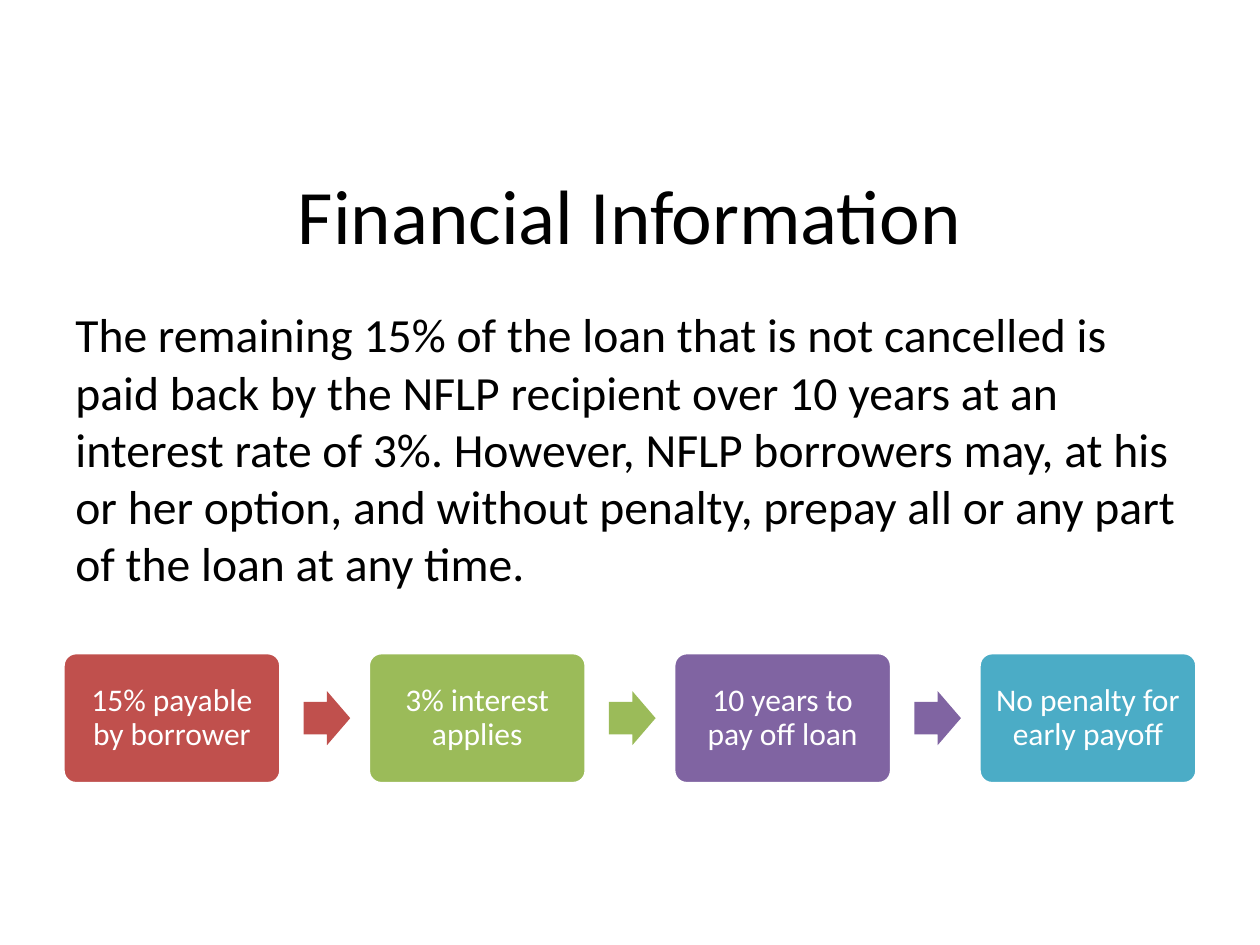
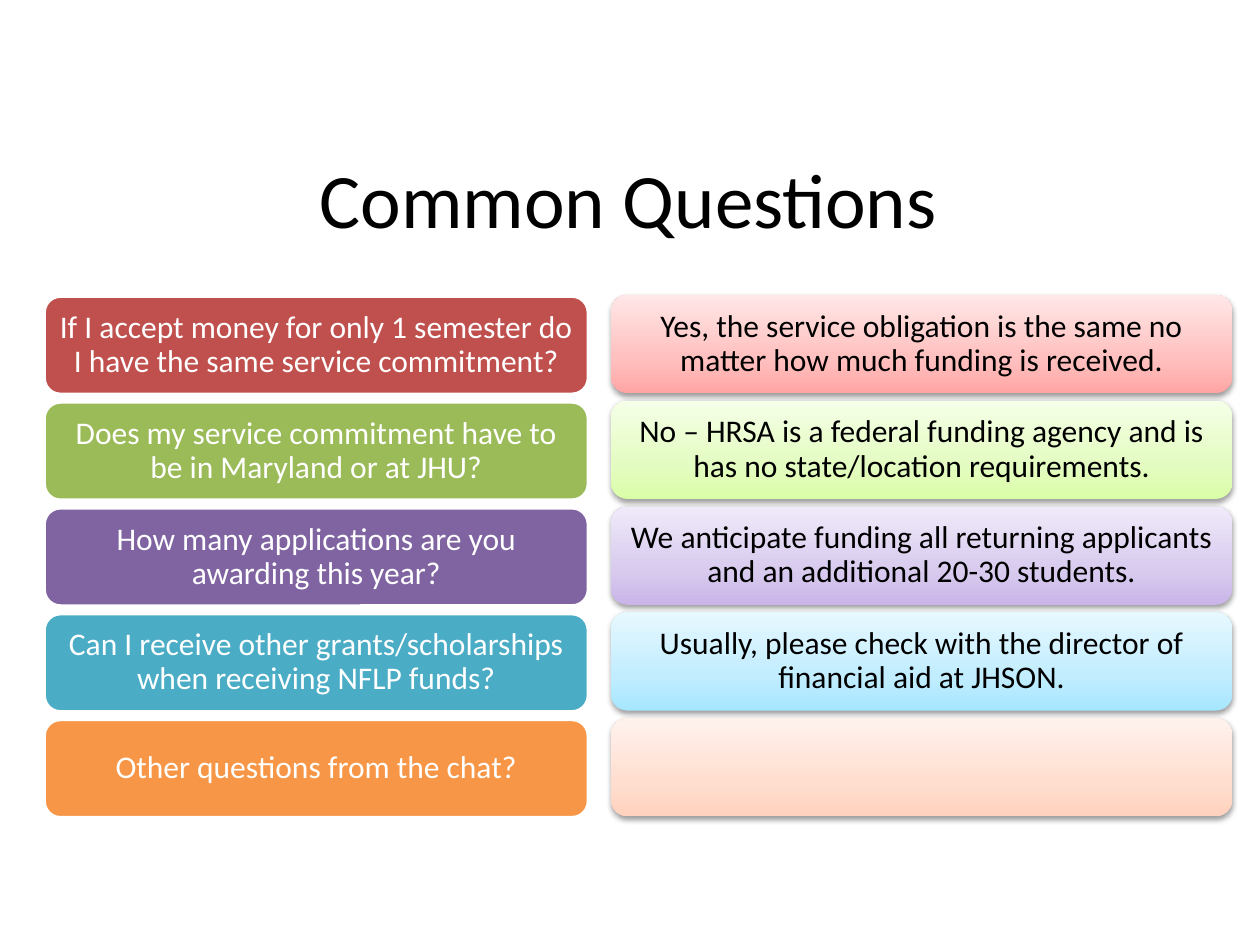
import copy

import pptx
import pptx.dml.color
import pptx.enum.shapes
import pptx.enum.text
import pptx.oxml.ns
import pptx.util
from lxml import etree

RGBColor = pptx.dml.color.RGBColor
MSO_SHAPE = pptx.enum.shapes.MSO_SHAPE
PP_ALIGN = pptx.enum.text.PP_ALIGN
MSO_ANCHOR = pptx.enum.text.MSO_ANCHOR
Pt = pptx.util.Pt
qn = pptx.oxml.ns.qn

FONT = "Calibri"
BLACK = RGBColor(0x00, 0x00, 0x00)
WHITE = RGBColor(0xFF, 0xFF, 0xFF)
RED = RGBColor(0xC0, 0x50, 0x4D)
GREEN = RGBColor(0x9B, 0xBB, 0x59)
PURPLE = RGBColor(0x80, 0x64, 0xA2)
TEAL = RGBColor(0x4B, 0xAC, 0xC6)
ORANGE = RGBColor(0xF7, 0x96, 0x46)

# Tints run from the bottom of a box to its top.
TINT_STOPS = (0, 0.35, 1)
RED_TINTS = (RGBColor(0xFF, 0xA6, 0xA5), RGBColor(0xFF, 0xC0, 0xBF), RGBColor(0xFF, 0xE7, 0xE7))
GREEN_TINTS = (RGBColor(0xDA, 0xFD, 0xA7), RGBColor(0xE4, 0xFC, 0xC2), RGBColor(0xF5, 0xFF, 0xE7))
PURPLE_TINTS = (RGBColor(0xC9, 0xB5, 0xE8), RGBColor(0xD8, 0xCB, 0xEE), RGBColor(0xF0, 0xEA, 0xF9))
TEAL_TINTS = (RGBColor(0xA7, 0xE6, 0xFF), RGBColor(0xC1, 0xED, 0xFF), RGBColor(0xE7, 0xF8, 0xFF))
ORANGE_TINTS = (RGBColor(0xFF, 0xD2, 0xBD), RGBColor(0xFF, 0xDE, 0xD0), RGBColor(0xFF, 0xF2, 0xED))

# The slide is a grid of 100 columns by 75 rows of square cells.
CELL = pptx.util.Inches(0.1)
COLUMNS, ROWS = 100, 75
CARD_INSET = round(0.7 * CELL)

REPAYMENT = (
    "The remaining 15% of the loan that is not cancelled is paid back by the NFLP "
    "recipient over 10 years at an interest rate of 3%. However, NFLP borrowers may, "
    "at his or her option, and without penalty, prepay all or any part of the loan "
    "at any time."
)
STEPS = [
    ("15% payable by borrower", RED),
    ("3% interest applies", GREEN),
    ("10 years to pay off loan", PURPLE),
    ("No penalty for early payoff", TEAL),
]
QUESTIONS = [
    ("If I accept money for only 1 semester do I have the same service commitment?", RED,
     "Yes, the service obligation is the same no matter how much funding is received.",
     RED_TINTS),
    ("Does my service commitment have to be in Maryland or at JHU?", GREEN,
     "No – HRSA is a federal funding agency and is has no state/location requirements.",
     GREEN_TINTS),
    ("How many applications are you awarding this year?", PURPLE,
     "We anticipate funding all returning applicants and an additional 20-30 students.",
     PURPLE_TINTS),
    ("Can I receive other grants/scholarships when receiving NFLP funds?", TEAL,
     "Usually, please check with the director of financial aid at JHSON.", TEAL_TINTS),
    ("Other questions from the chat?", ORANGE, "", ORANGE_TINTS),
]


def cells(*counts):
    return [round(count * CELL) for count in counts]


def write(frame, text, size, color, align=PP_ALIGN.CENTER, anchor=MSO_ANCHOR.MIDDLE,
          line_spacing=None):
    frame.word_wrap = True
    frame.vertical_anchor = anchor
    paragraph = frame.paragraphs[0]
    paragraph.alignment = align
    paragraph.line_spacing = line_spacing
    run = paragraph.add_run()
    run.text = text
    run.font.name = FONT
    run.font.size = Pt(size)
    run.font.color.rgb = color


def add_title(slide, text, left, top, height):
    title = slide.shapes.add_textbox(*cells(left, top, 90, height))
    write(title.text_frame, text, 44, BLACK)


def add_flat_shape(slide, preset, area, color):
    shape = slide.shapes.add_shape(preset, *cells(*area))
    shape.shadow.inherit = False
    shape.fill.solid()
    shape.fill.fore_color.rgb = color
    shape.line.fill.background()
    return shape


def add_card(slide, area, text, color, text_color=WHITE):
    """Rounded box with a white outline and centred text."""
    card = add_flat_shape(slide, MSO_SHAPE.ROUNDED_RECTANGLE, area, color)
    card.line.color.rgb = WHITE
    card.line.width = Pt(2)
    frame = card.text_frame
    frame.margin_left = frame.margin_right = CARD_INSET
    frame.margin_top = frame.margin_bottom = CARD_INSET
    if text:
        write(frame, text, 18, text_color, line_spacing=0.9)
    return card


def tint(card, tints):
    """Give a card a three-stop upward gradient instead of its flat fill."""
    card.fill.gradient()
    card.fill.gradient_angle = 90
    stop_list = card.element.spPr.find(qn("a:gradFill")).find(qn("a:gsLst"))
    stop_list.insert(1, copy.deepcopy(stop_list[0]))
    for stop, position, color in zip(card.fill.gradient_stops, TINT_STOPS, tints):
        stop.position = position
        stop.color.rgb = color


def cast_shadow(card):
    effects = card.element.spPr.find(qn("a:effectLst"))
    shadow = etree.SubElement(effects, qn("a:outerShdw"), blurRad=str(Pt(3.1)),
                              dist=str(Pt(1.6)), dir="5400000", rotWithShape="0")
    black = etree.SubElement(shadow, qn("a:srgbClr"), val=str(BLACK))
    etree.SubElement(black, qn("a:alpha"), val="38000")


def add_answer(slide, area, text, tints):
    answer = add_card(slide, area, text, tints[0], BLACK)
    answer.line.fill.background()
    tint(answer, tints)
    cast_shadow(answer)


def add_process(slide, steps, left, top, right):
    """Row of equally spaced step cards, each leading to the next by an arrow."""
    width, height = 17.3, 10.4
    arrow_width, arrow_height, arrow_offset = 3.7, 4.3, 19.1
    pitch = (right - left - width) / (len(steps) - 1)
    for index, (text, color) in enumerate(steps):
        step_left = left + index * pitch
        step = add_card(slide, (step_left, top, width, height), text, color)
        step.adjustments[0] = 0.1
        if index < len(steps) - 1:
            arrow_top = top + (height - arrow_height) / 2
            arrow = add_flat_shape(
                slide, MSO_SHAPE.RIGHT_ARROW,
                (step_left + arrow_offset, arrow_top, arrow_width, arrow_height), color)
            arrow.adjustments[0] = 0.6


def build_financial_slide(slide):
    add_title(slide, "Financial Information", 5, 10.7, 12.5)
    body = slide.shapes.add_textbox(*cells(5, 23.75, 90, 19.9))
    write(body.text_frame, REPAYMENT, 27.2, BLACK, PP_ALIGN.LEFT, MSO_ANCHOR.TOP, Pt(32.6))
    add_process(slide, STEPS, 5, 51.8, 95)


def build_questions_slide(slide):
    add_title(slide, "Common Questions", 4.9, 9.2, 13)
    row_pitch, height = 8.4, 7.8
    for index, (question, color, answer, tints) in enumerate(QUESTIONS):
        top = 23.5 + index * row_pitch
        add_card(slide, (3.5, top, 43.2, height), question, color)
        add_answer(slide, (48.5, top - 0.1, 49.3, height), answer, tints)


def main():
    deck = pptx.Presentation()
    deck.slide_width, deck.slide_height = cells(COLUMNS, ROWS)
    blank = deck.slide_layouts[6]
    build_financial_slide(deck.slides.add_slide(blank))
    build_questions_slide(deck.slides.add_slide(blank))
    deck.save("out.pptx")


if __name__ == "__main__":
    main()
